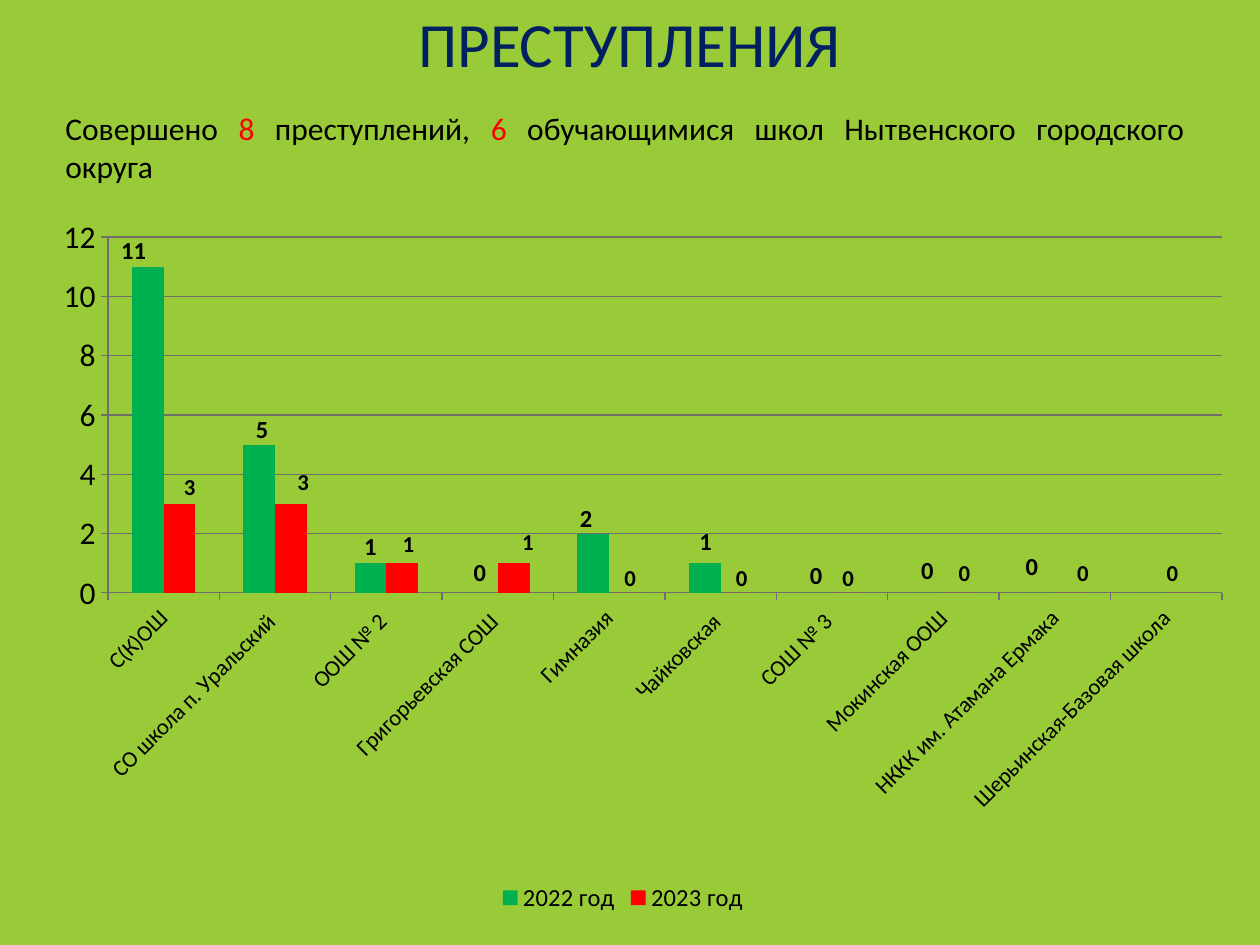
from lxml import etree
from pptx import Presentation
from pptx import util as u
from pptx.chart.data import CategoryChartData
from pptx.dml.color import RGBColor
from pptx.enum import chart as ch, text
from pptx.oxml.ns import qn

FONT = "Calibri"
BLACK, RED, GREEN, GRAY = "000000", "FF0000", "00B050", "6E6E6E"
CHART_BOX = (0, 197, 1246, 721)
PLOT_BOX = (108, 40, 1114, 356)
SCHOOLS = ["С(К)ОШ", "СО школа п. Уральский ", "ООШ № 2 ", "Григорьевская СОШ ",
           "Гимназия", "Чайковская ", "СОШ № 3 ", "Мокинская ООШ",
           "НККК им. Атамана Ермака", "Шерьинская-Базовая школа"]
CRIMES = {
    "2022 год": dict(
        values=[11, 5, 1, 0, 2, 1, 0, 0, 0, 0], color=GREEN, size=14,
        shifts=[(-14, 4), (3, 5), (0, 4), (-2, 0), (-7, 5), (1, -1),
                (0, 3), (0, -2), (-7, -6)]),
    "2023 год": dict(
        values=[3, 3, 1, 1, 0, 0, 0, 0, 0, 0], color=RED, size=13,
        shifts=[(10, 3), (12, -2), (6, 1), (14, -1), (5, 5), (5, 5),
                (0, 5), (5, 0), (12, 0), (-10, 0)]),
}


def px(n):
    return u.Emu(round(n * 914400 / 126))


def rgb(value):
    return RGBColor.from_string(value)


def set_font(font, size, color=BLACK, bold=False):
    font.name, font.size, font.bold = FONT, u.Pt(size), bold
    font.color.rgb = rgb(color)


def add_title(s, title, box):
    sp = s.shapes.title
    sp.left, sp.top, sp.width, sp.height = map(px, box)
    tf = sp.text_frame
    tf.text = title
    tf.vertical_anchor = text.MSO_ANCHOR.MIDDLE
    p = tf.paragraphs[0]
    p.alignment, p.line_spacing = text.PP_ALIGN.CENTER, 0.9
    set_font(p.font, 36, "002060")


def add_summary(s, runs, box):
    tf = s.shapes.add_textbox(*map(px, box)).text_frame
    tf.word_wrap = True
    tf.vertical_anchor = text.MSO_ANCHOR.MIDDLE
    p = tf.paragraphs[0]
    p.alignment = text.PP_ALIGN.JUSTIFY
    for content, color in runs:
        r = p.add_run()
        r.text = content
        set_font(r.font, 18, color)


def manual_layout(lengths, modes=()):
    layout = etree.Element(qn("c:layout"))
    manual = etree.SubElement(layout, qn("c:manualLayout"))
    for tag, value in modes:
        etree.SubElement(manual, qn(f"c:{tag}")).set("val", value)
    for tag, length, whole in zip("xywh", lengths, CHART_BOX[2:] * 2):
        etree.SubElement(manual, qn(f"c:{tag}")).set("val", str(length / whole))
    return layout


def place_plot(chart):
    area = chart._chartSpace.chart.plotArea
    for old in area.findall(qn("c:layout")):
        area.remove(old)
    modes = [("layoutTarget", "inner"), ("xMode", "edge"), ("yMode", "edge")]
    area.insert(0, manual_layout(PLOT_BOX, modes))


def label_points(series, shifts, size):
    series.data_labels.show_value = False
    for i, shift in enumerate(shifts):
        label = series.points[i].data_label
        set_font(label.font, size, bold=True)
        label.position = ch.XL_LABEL_POSITION.OUTSIDE_END
        idx = series._element.xpath(f"c:dLbls/c:dLbl/c:idx[@val='{i}']")[0]
        idx.addnext(manual_layout(shift))


def format_axes(chart):
    cat, val = chart.category_axis, chart.value_axis
    set_font(cat.tick_labels.font, 13)
    cat._element.find(qn("c:txPr")).find(qn("a:bodyPr")).set("rot", "-2700000")
    set_font(val.tick_labels.font, 18)
    val.minimum_scale, val.maximum_scale, val.major_unit = 0, 12, 2
    val.has_major_gridlines = True
    for axis in (cat, val):
        axis.major_tick_mark = ch.XL_TICK_MARK.OUTSIDE
    for part in (cat, val, val.major_gridlines):
        part.format.line.color.rgb = rgb(GRAY)


def add_crime_chart(s):
    data = CategoryChartData()
    data.categories = SCHOOLS
    for year, crimes in CRIMES.items():
        data.add_series(year, crimes["values"])
    chart = s.shapes.add_chart(
        ch.XL_CHART_TYPE.COLUMN_CLUSTERED, *map(px, CHART_BOX), data).chart
    set_font(chart.font, 18)
    chart.has_title = False
    chart.has_legend = True
    chart.legend.position = ch.XL_LEGEND_POSITION.BOTTOM
    chart.legend.include_in_layout = False
    set_font(chart.legend.font, 14)
    plot = chart.plots[0]
    plot.gap_width, plot.overlap, plot.vary_by_categories = 150, 0, False
    for series in plot.series:
        crimes = CRIMES[series.name]
        series.format.fill.solid()
        series.format.fill.fore_color.rgb = rgb(crimes["color"])
        label_points(series, crimes["shifts"], crimes["size"])
    format_axes(chart)
    place_plot(chart)


def main():
    prs = Presentation()
    prs.slide_width, prs.slide_height = px(1260), px(945)
    s = prs.slides.add_slide(prs.slide_layouts[5])
    s.background.fill.solid()
    s.background.fill.fore_color.rgb = rgb("99CB38")
    add_title(s, "ПРЕСТУПЛЕНИЯ", (0, 21, 1260, 53))
    add_crime_chart(s)
    add_summary(s, [("Совершено ", BLACK), ("8", RED), (" преступлений, ", BLACK),
                    ("6", RED),
                    (" обучающимися школ Нытвенского городского округа", BLACK)],
                (53, 84, 1144, 126))
    prs.save("out.pptx")


if __name__ == "__main__":
    main()
